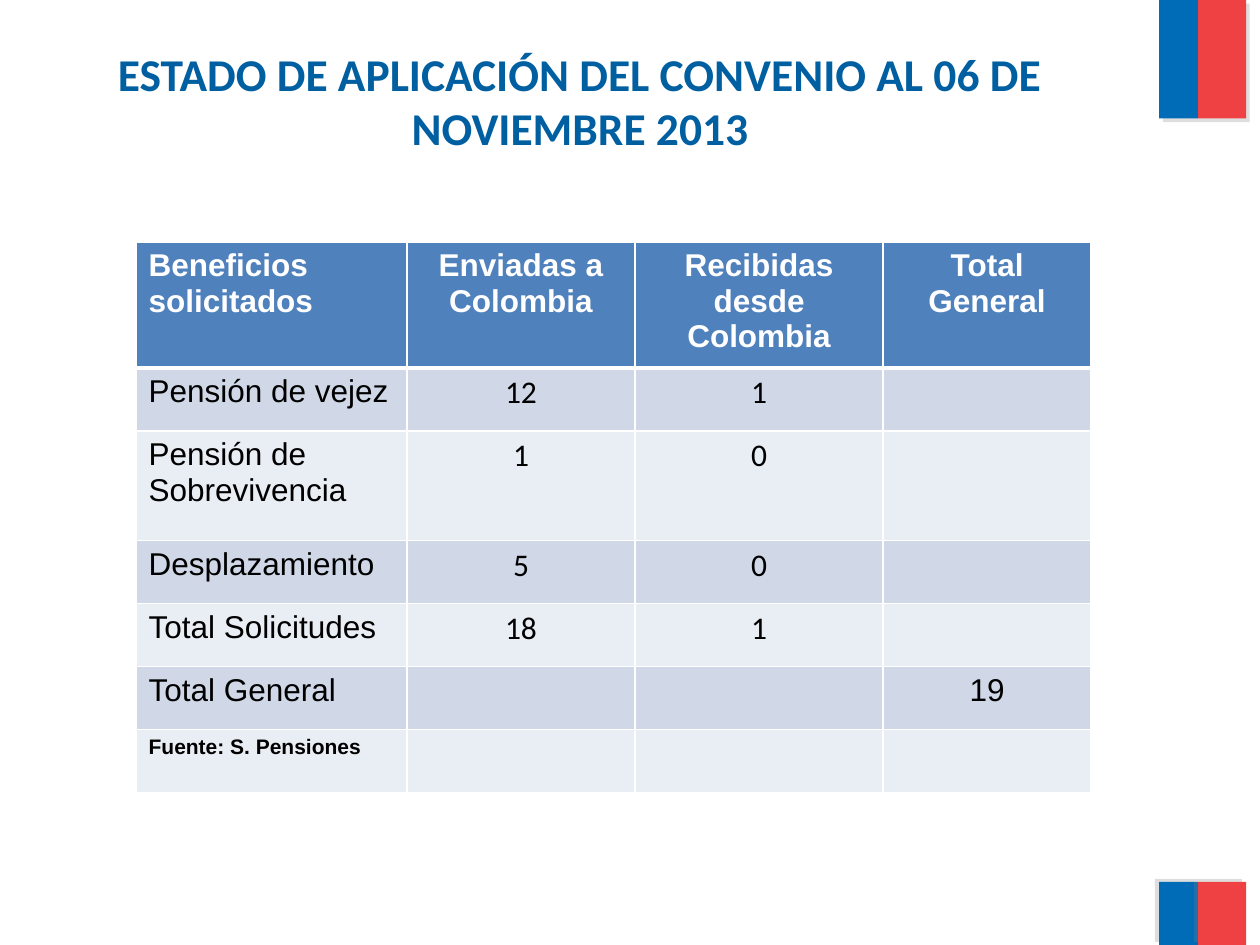
"""Build the slide on the state of the pension agreement, with its table of requests."""
import pptx
import pptx.dml.color
import pptx.enum.shapes
import pptx.enum.text
import pptx.oxml
import pptx.oxml.ns
import pptx.util

COLORS = {
    "blue": "006CB7", "red": "EF4144", "shadow": "808080", "title": "005FA1",
    "header": "4F81BD", "odd": "D0D8E8", "even": "E9EDF4",
    "white": "FFFFFF", "black": "000000",
}
NS = pptx.oxml.ns.nsdecls("a")
CENTER = pptx.enum.text.PP_ALIGN.CENTER
LEFT = pptx.enum.text.PP_ALIGN.LEFT

deck = pptx.Presentation()
deck.slide_width, deck.slide_height = pptx.util.Inches(10), pptx.util.Inches(7.5)
slide = deck.slides.add_slide(deck.slide_layouts[6])
COL, ROW = deck.slide_width / 100, deck.slide_height / 75


def grid(left, top, width, height):
    return [int(left * COL), int(top * ROW), int(width * COL), int(height * ROW)]


def style(paragraph, face, size, color, bold, align):
    paragraph.alignment = align
    paragraph.font.name = face
    paragraph.font.size = pptx.util.Pt(size)
    paragraph.font.bold = bold
    paragraph.font.color.rgb = pptx.dml.color.RGBColor.from_string(COLORS[color])


for top, height, angle in ((0, 9.4, 45), (70, 5, 215)):
    for left, width, color in ((92, 3.1, "blue"), (95.1, 3.8, "red")):
        band = slide.shapes.add_shape(
            pptx.enum.shapes.MSO_SHAPE.RECTANGLE, *grid(left, top, width, height))
        band.fill.solid()
        band.fill.fore_color.rgb = pptx.dml.color.RGBColor.from_string(COLORS[color])
        band.line.fill.background()
        band.shadow.inherit = False
        effects = band.fill._xPr.find(pptx.oxml.ns.qn("a:effectLst"))
        effects.append(pptx.oxml.parse_xml(
            f'<a:outerShdw {NS} blurRad="0" dist="{pptx.util.Pt(3)}" dir="{angle * 60000}" '
            f'algn="ctr" rotWithShape="0"><a:srgbClr val="{COLORS["shadow"]}">'
            '<a:alpha val="25000"/></a:srgbClr></a:outerShdw>'))

heading = slide.shapes.add_textbox(*grid(1.4, 2.8, 89.3, 10.3)).text_frame
heading.word_wrap = True
heading.vertical_anchor = pptx.enum.text.MSO_ANCHOR.MIDDLE
heading.text = "ESTADO DE APLICACIÓN DEL CONVENIO AL 06 DE NOVIEMBRE 2013"
style(heading.paragraphs[0], "Calibri", 26, "title", True, CENTER)

requests = [
    ("Beneficios solicitados", "Enviadas a Colombia", "Recibidas desde Colombia", "Total General"),
    ("Pensión de vejez", "12", "1", ""),
    ("Pensión de Sobrevivencia", "1", "0", ""),
    ("Desplazamiento", "5", "0", ""),
    ("Total Solicitudes", "18", "1", ""),
    ("Total General", "", "", "19"),
    ("Fuente: S. Pensiones", "", "", ""),
]
column_widths = (21.5, 18.1, 19.7, 16.5)
row_heights = (8.7, 5, 8.7, 5, 5, 5, 5)
table = slide.shapes.add_table(
    len(requests), len(column_widths),
    *grid(10.8, 19.2, sum(column_widths), sum(row_heights))).table
for column, width in zip(table.columns, column_widths):
    column.width = int(width * COL)
for row, height in zip(table.rows, row_heights):
    row.height = int(height * ROW)

for r, entries in enumerate(requests):
    is_header, is_source = r == 0, r == len(requests) - 1
    band_color = "header" if is_header else ("even", "odd")[r % 2]
    for c, entry in enumerate(entries):
        cell = table.cell(r, c)
        cell.text = entry
        is_count = not is_header and c in (1, 2) and entry
        paragraph = cell.text_frame.paragraphs[0]
        style(paragraph, "Calibri" if is_count else "Arial", 12 if is_source else 18,
              "white" if is_header else "black", is_header or is_source,
              CENTER if c else LEFT)
        if is_count:
            paragraph.line_spacing = 1.15
            cell.margin_left = cell.margin_right = int(0.7 * COL)
            cell.margin_top = cell.margin_bottom = 0
        properties = cell._tc.get_or_add_tcPr()
        for side in "LRTB":
            thick = (is_header and side == "B") or (r == 1 and side == "T")
            properties.append(pptx.oxml.parse_xml(
                f'<a:ln{side} {NS} w="{pptx.util.Pt(3 if thick else 1)}"><a:solidFill>'
                f'<a:srgbClr val="{COLORS["white"]}"/></a:solidFill></a:ln{side}>'))
        cell.fill.solid()
        cell.fill.fore_color.rgb = pptx.dml.color.RGBColor.from_string(COLORS[band_color])

deck.save("out.pptx")
